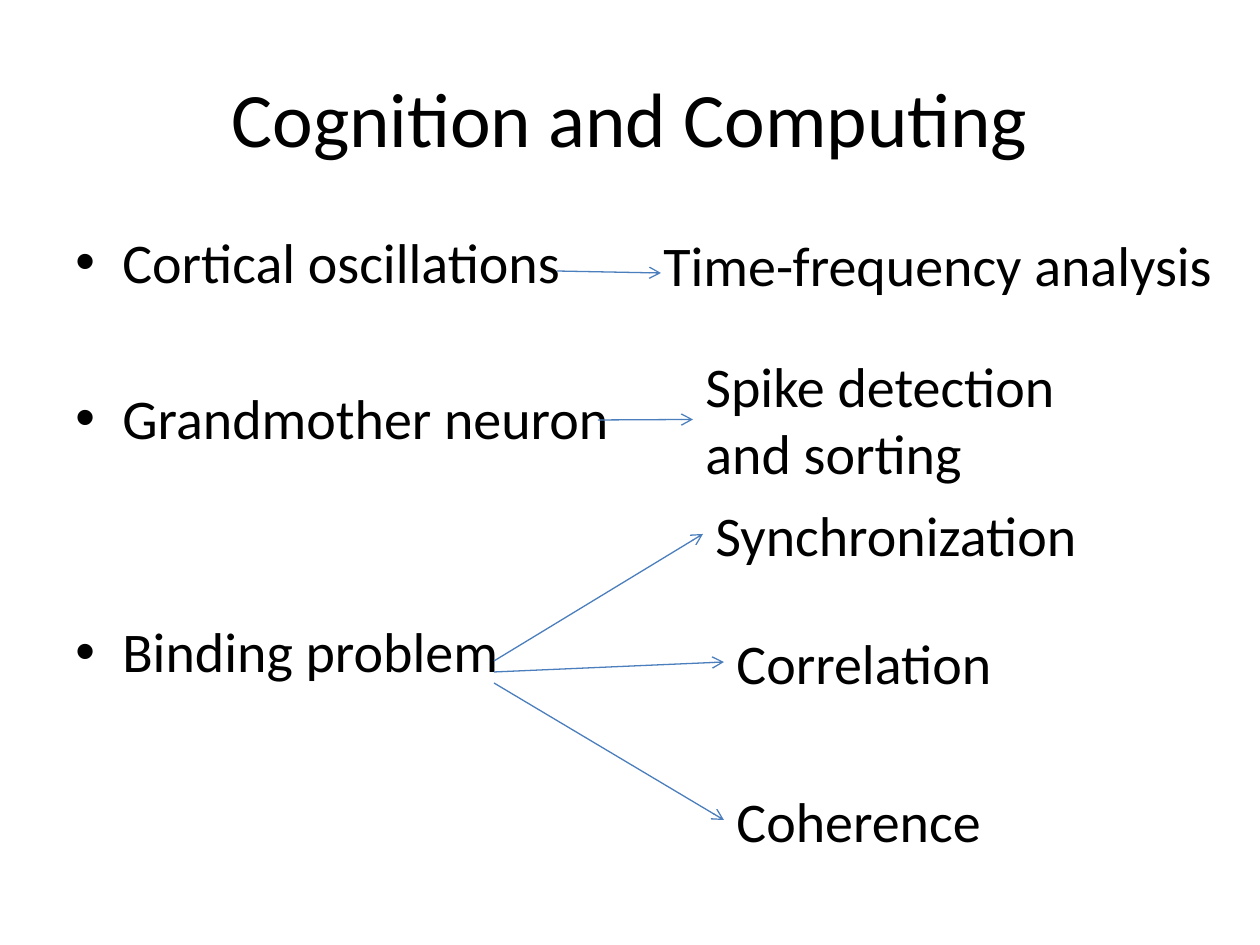
"""Build the Cognition and Computing slide linking brain topics to analysis methods."""
import dataclasses
import typing

import lxml.etree
import pptx
import pptx.dml.color
import pptx.enum.shapes
import pptx.enum.text
import pptx.oxml.ns
import pptx.shapes.autoshape
import pptx.slide
import pptx.text.text
import pptx.util

EMU_PER_PX = 914400 / 126


@dataclasses.dataclass(frozen=True)
class Theme:
    font: str = "Calibri"
    ink: str = "000000"
    arrow: str = "4B7EBC"
    paper: str = "FFFFFF"
    title_pt: int = 44
    text_pt: int = 32
    arrow_pt: float = 0.75


@dataclasses.dataclass(frozen=True)
class Topic:
    text: str
    space_before_pt: float


@dataclasses.dataclass(frozen=True)
class Method:
    text: str
    left: int
    top: int
    width: int
    height: int
    arrow_start: tuple[int, int]
    arrow_end: typing.Optional[tuple[int, int]] = None


THEME = Theme()
BULLET_INDENT = 47
TOPICS = (
    Topic("Cortical oscillations", 0),
    Topic("Grandmother neuron", 50.7),
    Topic("Binding problem", 95.2),
)
METHODS = (
    Method("Synchronization", 703, 494, 388, 80, (494, 661)),
    Method("Correlation", 724, 622, 294, 80, (494, 672)),
    Method("Coherence", 724, 780, 284, 80, (494, 683)),
    Method("Time-frequency analysis", 651, 224, 577, 80, (557, 271), (661, 273)),
    Method("Spike detection and sorting", 693, 345, 388, 149, (598, 420)),
)


def px(length: int) -> pptx.util.Emu:
    return pptx.util.Emu(round(length * EMU_PER_PX))


def colour(value: str) -> pptx.dml.color.RGBColor:
    return pptx.dml.color.RGBColor.from_string(value)


def apply(target: object, values: dict[str, typing.Any]) -> None:
    for name, value in values.items():
        setattr(target, name, value)


def add_box(
    page: pptx.slide.Slide, left: int, top: int, width: int, height: int, **frame: typing.Any
) -> pptx.shapes.autoshape.Shape:
    box = page.shapes.add_textbox(px(left), px(top), px(width), px(height))
    apply(box.text_frame, {"word_wrap": True, **frame})
    return box


def write(para: pptx.text.text._Paragraph, text: str, size: int, **layout: typing.Any) -> None:
    apply(para, layout)
    span = para.add_run()
    span.text = text
    apply(span.font, {"name": THEME.font, "size": pptx.util.Pt(size)})
    span.font.color.rgb = colour(THEME.ink)


def add_bullet(para: pptx.text.text._Paragraph) -> None:
    props = para._p.get_or_add_pPr()
    props.set("marL", str(px(BULLET_INDENT)))
    props.set("indent", str(-px(BULLET_INDENT)))
    qn = pptx.oxml.ns.qn
    lxml.etree.SubElement(props, qn("a:buFont"), typeface="Arial")
    lxml.etree.SubElement(props, qn("a:buChar"), char="•")


def add_title(page: pptx.slide.Slide, text: str) -> None:
    box = add_box(
        page, 63, 38, 1134, 157, vertical_anchor=pptx.enum.text.MSO_ANCHOR.MIDDLE
    )
    write(
        box.text_frame.paragraphs[0], text, THEME.title_pt,
        alignment=pptx.enum.text.PP_ALIGN.CENTER,
    )


def add_topics(page: pptx.slide.Slide, topics: tuple[Topic, ...]) -> None:
    frame = add_box(page, 63, 221, 1134, 623).text_frame
    for index, topic in enumerate(topics):
        para = frame.add_paragraph() if index else frame.paragraphs[0]
        space = pptx.util.Pt(topic.space_before_pt)
        write(para, topic.text, THEME.text_pt, space_before=space)
        add_bullet(para)


def add_method(page: pptx.slide.Slide, method: Method) -> None:
    box = add_box(
        page, method.left, method.top, method.width, method.height,
        auto_size=pptx.enum.text.MSO_AUTO_SIZE.SHAPE_TO_FIT_TEXT,
    )
    write(box.text_frame.paragraphs[0], method.text, THEME.text_pt)
    end = method.arrow_end or (method.left, method.top + method.height // 2)
    arrow = page.shapes.add_connector(
        pptx.enum.shapes.MSO_CONNECTOR.STRAIGHT,
        *(px(value) for value in (*method.arrow_start, *end)),
    )
    if method.arrow_end is None:
        arrow.end_connect(box, 1)
    arrow.line.color.rgb = colour(THEME.arrow)
    arrow.line.width = pptx.util.Pt(THEME.arrow_pt)
    qn = pptx.oxml.ns.qn
    lxml.etree.SubElement(arrow.line._get_or_add_ln(), qn("a:tailEnd"), type="arrow")
    lxml.etree.SubElement(arrow._element.spPr, qn("a:effectLst"))


def main() -> None:
    deck = pptx.Presentation()
    apply(deck, {"slide_width": px(1260), "slide_height": px(945)})
    page = deck.slides.add_slide(deck.slide_layouts[6])
    page.background.fill.solid()
    page.background.fill.fore_color.rgb = colour(THEME.paper)
    add_title(page, "Cognition and Computing")
    add_topics(page, TOPICS)
    for method in METHODS:
        add_method(page, method)
    deck.save("out.pptx")


if __name__ == "__main__":
    main()
